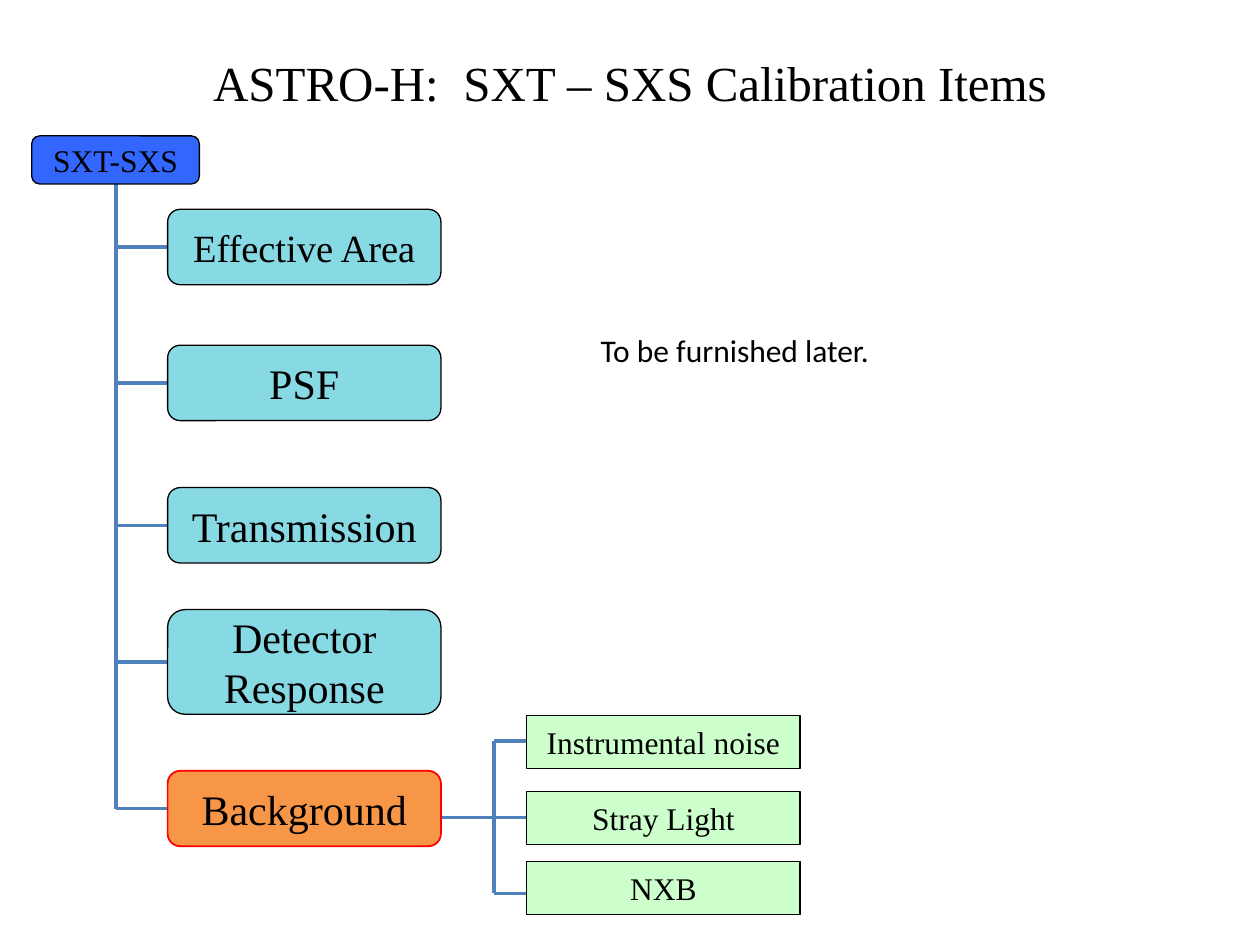
from pptx import Presentation
from pptx.dml.color import RGBColor
from pptx.enum.shapes import MSO_CONNECTOR as Link, MSO_SHAPE as Shape
from pptx.enum.text import MSO_ANCHOR as Anchor, PP_ALIGN as Align
from pptx.oxml.ns import qn
from pptx.util import Cm, Pt
from lxml.etree import SubElement

BLACK = RGBColor(0x00, 0x00, 0x00)
BLUE = RGBColor(0x33, 0x66, 0xFF)
CYAN = RGBColor(0x87, 0xD9, 0xE3)
ORANGE = RGBColor(0xF7, 0x96, 0x46)
RED = RGBColor(0xFF, 0x00, 0x00)
GREEN = RGBColor(0xCC, 0xFF, 0xCC)
STEEL = RGBColor(0x4F, 0x81, 0xBD)

SERIF = "Times New Roman"
ROUNDED = Shape.FLOWCHART_ALTERNATE_PROCESS
BOX_WIDTH = 5.51
TRUNK_X, ITEM_X = 2.34, 3.38
BRANCH_X, DETAIL_X = 9.96, 10.62

deck = Presentation()
deck.slide_width, deck.slide_height = Cm(25.4), Cm(19.05)
page = deck.slides.add_slide(deck.slide_layouts[6])


def write(box, text, size, font=SERIF, align=Align.CENTER, anchor=Anchor.MIDDLE, wrap=True):
    frame = box.text_frame
    frame.word_wrap = wrap
    frame.vertical_anchor = anchor
    para = frame.paragraphs[0]
    para.alignment = align
    span = para.add_run()
    span.text = text
    for name, value in {"name": font, "size": Pt(size)}.items():
        setattr(span.font, name, value)
    span.font.color.rgb = BLACK


title = page.shapes.add_textbox(Cm(1.27), Cm(0.76), Cm(22.86), Cm(1.78))
write(title, "ASTRO-H:  SXT – SXS Calibration Items", 28)

items = [
    ("Effective Area", 4.22, 1.52, 22, CYAN, BLACK, 0.75),
    ("PSF", 6.96, 1.52, 24, CYAN, BLACK, 0.75),
    ("Transmission", 9.83, 1.52, 24, CYAN, BLACK, 0.75),
    ("Detector Response", 12.29, 2.11, 24, CYAN, BLACK, 0.75),
    ("Background", 15.54, 1.52, 24, ORANGE, RED, 1),
]
details = [("Instrumental noise", 14.43), ("Stray Light", 15.95), ("NXB", 17.37)]

item_levels = [top + height / 2 for _, top, height, *_ in items]
detail_levels = [14.94, 16.48, 18.01]
lines = [(TRUNK_X, 3.71, TRUNK_X, item_levels[-1])]
lines += [(TRUNK_X, y, ITEM_X, y) for y in item_levels]
lines += [(BRANCH_X, detail_levels[0], BRANCH_X, detail_levels[-1])]
lines += [(BRANCH_X, y, DETAIL_X, y) for y in detail_levels]
lines += [(ITEM_X + BOX_WIDTH, detail_levels[1], BRANCH_X, detail_levels[1])]

for ends in lines:
    line = page.shapes.add_connector(Link.STRAIGHT, *map(Cm, ends))
    line.line.color.rgb = STEEL
    line.line.width = Pt(2)
    SubElement(line.element.spPr, qn("a:effectLst"))

boxes = [(ROUNDED, 0.64, 2.74, 3.38, 0.97, "SXT-SXS", 18, BLUE, BLACK, 0.75)]
for text, top, height, size, fill, edge, weight in items:
    boxes.append((ROUNDED, ITEM_X, top, BOX_WIDTH, height, text, size, fill, edge, weight))
for text, top in details:
    boxes.append((Shape.RECTANGLE, DETAIL_X, top, BOX_WIDTH, 1.07, text, 18, GREEN, BLACK, 0.75))

for kind, left, top, width, height, text, size, fill, edge, weight in boxes:
    box = page.shapes.add_shape(kind, Cm(left), Cm(top), Cm(width), Cm(height))
    box.shadow.inherit = False
    box.fill.solid()
    box.fill.fore_color.rgb = fill
    box.line.color.rgb = edge
    box.line.width = Pt(weight)
    write(box, text, size)

note = page.shapes.add_textbox(Cm(11.86), Cm(6.55), Cm(5.97), Cm(1.02))
write(note, "To be furnished later.", 18, "Calibri", Align.LEFT, Anchor.TOP, False)

deck.save("out.pptx")
